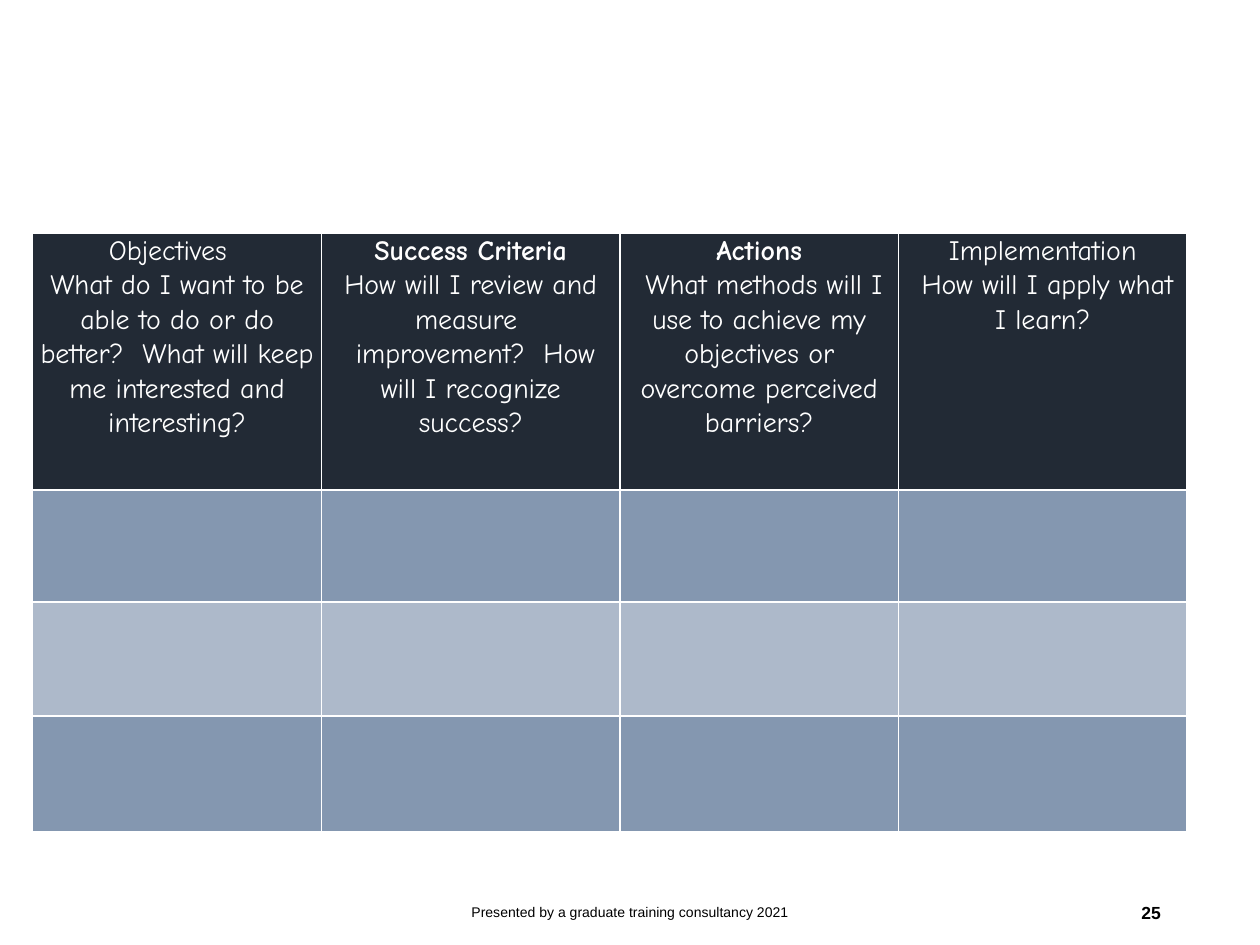
from dataclasses import dataclass

from lxml import etree
from pptx import Presentation
from pptx.dml.color import RGBColor
from pptx.enum.text import MSO_ANCHOR, PP_ALIGN
from pptx.oxml.ns import qn
from pptx.util import Cm, Pt

CENTER, RIGHT = PP_ALIGN.CENTER, PP_ALIGN.RIGHT
MIDDLE = MSO_ANCHOR.MIDDLE
BLANK_LAYOUT = 6


@dataclass(frozen=True)
class Theme:
    table_font: str = "Comic Neue"
    footer_font: str = "Arial"
    header_size: int = 16
    footer_size: int = 8
    number_size: int = 10
    border_width: int = 1
    ink: str = "000000"
    paper: str = "FFFFFF"
    header_fill: str = "222A35"
    dark_band: str = "8497B0"
    light_band: str = "ADB9CA"


THEME = Theme()

COLUMN_WIDTHS = (5.82, 6.02, 5.61, 5.82)
ROW_HEIGHTS = (5.18, 2.26, 2.29, 2.34)
QUESTIONS = (
    ("Objectives  ", False, (
        "What do I want to be able to do or do better?  What will keep me "
        "interested and interesting?",)),
    ("Success Criteria", True, (
        "How will I review and measure ",
        " improvement?  How will I recognize success?")),
    ("Actions", True, (
        " What methods will I use to achieve my objectives or overcome "
        "perceived barriers?",)),
    ("Implementation", False, (" How will I apply what I learn?",)),
)


def style_font(paragraph, name, size, color, bold=False):
    font = paragraph.font
    font.name, font.size, font.bold = name, Pt(size), bold
    font.color.rgb = RGBColor.from_string(color)


def style_cell(cell, fill):
    properties = cell._tc.get_or_add_tcPr()
    for side in ("a:lnL", "a:lnR", "a:lnT", "a:lnB"):
        border = etree.SubElement(
            properties, qn(side), w=str(Pt(THEME.border_width)))
        stroke = etree.SubElement(border, qn("a:solidFill"))
        etree.SubElement(stroke, qn("a:srgbClr"), val=THEME.paper)
    cell.fill.solid()
    cell.fill.fore_color.rgb = RGBColor.from_string(fill)


def write_question(cell, heading, heading_bold, prompts):
    cell.margin_left = cell.margin_right = Cm(0.15)
    cell.margin_top = cell.margin_bottom = 0
    cell.text = "\n".join((heading, *prompts))
    for index, paragraph in enumerate(cell.text_frame.paragraphs):
        paragraph.alignment = CENTER
        paragraph.line_spacing = 1.07
        style_font(paragraph, THEME.table_font, THEME.header_size,
                   THEME.paper, heading_bold and index == 0)


def add_learning_plan(slide, left, top):
    plan = slide.shapes.add_table(
        len(ROW_HEIGHTS), len(COLUMN_WIDTHS), Cm(left), Cm(top),
        Cm(sum(COLUMN_WIDTHS)), Cm(sum(ROW_HEIGHTS))).table
    plan.horz_banding = False
    for column, width in zip(plan.columns, COLUMN_WIDTHS):
        column.width = Cm(width)
    fills = (THEME.header_fill, THEME.dark_band,
             THEME.light_band, THEME.dark_band)
    for row, height, fill in zip(plan.rows, ROW_HEIGHTS, fills):
        row.height = Cm(height)
        for cell in row.cells:
            style_cell(cell, fill)
    for cell, question in zip(plan.rows[0].cells, QUESTIONS):
        write_question(cell, *question)


def add_footer_text(slide, box, text, alignment, size, bold=False):
    frame = slide.shapes.add_textbox(*map(Cm, box)).text_frame
    frame.word_wrap = True
    frame.vertical_anchor = MIDDLE
    paragraph = frame.paragraphs[0]
    paragraph.text = text
    paragraph.alignment = alignment
    style_font(paragraph, THEME.footer_font, size, THEME.ink, bold)


def add_footer(slide, left, top, width, height):
    presenter_width, number_width = 8.59, 5.72
    add_footer_text(slide, (left, top, presenter_width, height),
                    "Presented by a graduate training consultancy 2021",
                    CENTER, THEME.footer_size)
    add_footer_text(
        slide, (left + width - number_width, top, number_width, height),
        "25", RIGHT, THEME.number_size, True)


def main():
    deck = Presentation()
    deck.slide_width, deck.slide_height = Cm(25.4), Cm(19.05)
    slide = deck.slides.add_slide(deck.slide_layouts[BLANK_LAYOUT])
    add_learning_plan(slide, 0.66, 4.7)
    add_footer(slide, 8.41, 17.88, 15.24, 1.02)
    deck.save("out.pptx")


if __name__ == "__main__":
    main()
